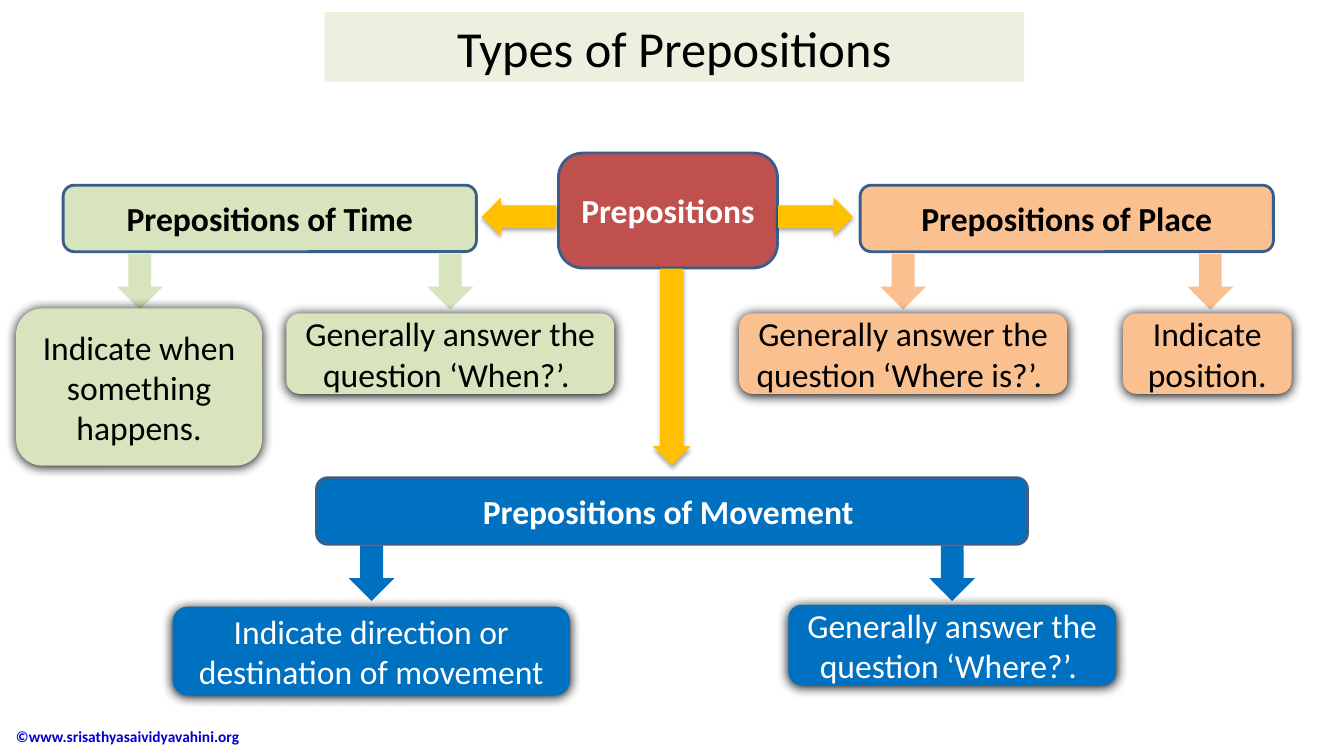
from dataclasses import dataclass
from typing import Optional

from lxml.etree import SubElement
from pptx import Presentation
from pptx.dml.color import RGBColor
from pptx.enum.shapes import MSO_SHAPE as Shape
from pptx.enum.text import MSO_ANCHOR as Anchor, MSO_AUTO_SIZE as AutoSize, PP_ALIGN as Align
from pptx.oxml.ns import qn
from pptx.util import Inches, Pt

COLORS = {
    "green": "D7E4BD", "orange": "FAC090", "blue": "0070C0", "red": "C0504D",
    "gold": "FFC000", "pale": "EBF1DE", "border": "395E89", "link": "0000CC",
    "white": "FFFFFF", "black": "000000",
}
FONT = "Calibri"


@dataclass
class Area:
    """Position and size in percent of the slide's width and height."""
    x: float
    y: float
    w: float
    h: float


@dataclass
class Shadow:
    opacity: int
    blur: float
    distance: float


@dataclass
class Detail:
    text: str
    area: Area
    arrow_x: float


@dataclass
class Branch:
    title: str
    area: Area
    fill: str
    ink: str
    arrow_y: float
    details: list[Detail]


BOX_SHADOW = Shadow(100, 8.5, 1)
ARROW_SHADOW = Shadow(35, 3.1, 1.8)
HEAD_Y, HEAD_W, HEAD_H = 24.5, 30.75, 8.8
DETAIL_Y, DETAIL_W, DETAIL_H = 41.45, 24.4, 10.65
ARROW_W, ARROW_H, ARROW_Y = 3.4, 7.35, 33.6

BRANCHES = [
    Branch("Prepositions of Movement ", Area(23.55, 63.2, 52.9, HEAD_H), "blue", "white", 72.15, [
        Detail("Indicate direction or destination of movement",
               Area(12.85, 80.25, 29.55, 11.75), 25.95),
        Detail("Generally answer the question ‘Where?’. ",
               Area(58.65, 80, DETAIL_W, DETAIL_H), 69.15),
    ]),
    Branch("Prepositions of Time", Area(4.7, HEAD_Y, HEAD_W, HEAD_H), "green", "black", ARROW_Y, [
        Detail("Indicate when something happens.", Area(1.2, 40.8, 18.3, 20.8), 8.7),
        Detail("Generally answer the question ‘When?’. ",
               Area(21.3, DETAIL_Y, DETAIL_W, DETAIL_H), 31.8),
    ]),
    Branch("Prepositions of Place", Area(64, HEAD_Y, HEAD_W, HEAD_H), "orange", "black", ARROW_Y, [
        Detail("Indicate position.", Area(83.55, DETAIL_Y, 12.55, DETAIL_H), 88.35),
        Detail("Generally answer the question ‘Where is?’. ",
               Area(55, DETAIL_Y, DETAIL_W, DETAIL_H), 65.5),
    ]),
]
HUB_ARROWS = [
    (Shape.DOWN_ARROW, Area(48.55, 35.55, 2.85, 26)),
    (Shape.LEFT_ARROW, Area(35.85, 26.15, 5.55, 5.05)),
    (Shape.RIGHT_ARROW, Area(57.9, 26.15, 5.55, 5.05)),
]

prs = Presentation()
prs.slide_width, prs.slide_height = Inches(13.33), Inches(7.5)
slide = prs.slides.add_slide(prs.slide_layouts[5])


def rgb(name: str) -> RGBColor:
    return RGBColor.from_string(COLORS[name])


def place(area: Area) -> tuple[int, int, int, int]:
    """Turn percentages into left, top, width and height."""
    col, row = prs.slide_width / 100, prs.slide_height / 100
    return int(area.x * col), int(area.y * row), int(area.w * col), int(area.h * row)


def write(sp, text: str, size: float, ink: str, bold: bool = False,
          align: Align = Align.CENTER) -> None:
    tf = sp.text_frame
    tf.auto_size = AutoSize.NONE
    tf.word_wrap = True
    tf.vertical_anchor = Anchor.MIDDLE
    p = tf.paragraphs[0]
    p.text = text
    p.alignment = align
    p.font.name, p.font.size, p.font.bold = FONT, Pt(size), bold
    p.font.color.rgb = rgb(ink)


def add_figure(kind: Shape, area: Area, fill: str, border: Optional[str] = None,
               shadow: Optional[Shadow] = None):
    sp = slide.shapes.add_shape(kind, *place(area))
    sp.fill.solid()
    sp.fill.fore_color.rgb = rgb(fill)
    if border:
        sp.line.color.rgb = rgb(border)
        sp.line.width = Pt(2)
    else:
        sp.line.fill.background()
    sp.shadow.inherit = False
    if shadow:
        effects = sp.element.spPr.find(qn("a:effectLst"))
        outer = SubElement(effects, qn("a:outerShdw"), blurRad=str(Pt(shadow.blur)),
                           dist=str(Pt(shadow.distance)), dir="5400000", rotWithShape="0")
        color = SubElement(outer, qn("a:srgbClr"), val=COLORS["black"])
        SubElement(color, qn("a:alpha"), val=str(shadow.opacity * 1000))
    return sp


def add_branch(branch: Branch) -> None:
    head = add_figure(Shape.ROUNDED_RECTANGLE, branch.area, branch.fill, border="border")
    write(head, branch.title, 24, branch.ink, bold=True)
    for detail in branch.details:
        add_figure(Shape.DOWN_ARROW, Area(detail.arrow_x, branch.arrow_y, ARROW_W, ARROW_H),
                   branch.fill)
        box = add_figure(Shape.ROUNDED_RECTANGLE, detail.area, branch.fill, shadow=BOX_SHADOW)
        write(box, detail.text, 24, branch.ink)


title = slide.shapes.title
title.left, title.top, title.width, title.height = place(Area(24.15, 1.6, 52.05, 9.2))
title.fill.solid()
title.fill.fore_color.rgb = rgb("pale")
write(title, "Types of Prepositions", 36, "black")

credit = slide.shapes.add_textbox(*place(Area(0.45, 94.8, 27, 5.2)))
write(credit, "©www.srisathyasaividyavahini.org", 11, "link", bold=True, align=Align.LEFT)

hub = add_figure(Shape.ROUNDED_RECTANGLE, Area(41.55, 20.25, 16.3, 15.2), "red", border="border")
hub.adjustments[0] = 0.21
write(hub, "Prepositions", 24, "white", bold=True)

for branch in BRANCHES:
    add_branch(branch)

for kind, area in HUB_ARROWS:
    arrow = add_figure(kind, area, "gold", shadow=ARROW_SHADOW)
    arrow.adjustments[0] = 0.6
    arrow.adjustments[1] = 0.5

prs.save("out.pptx")
